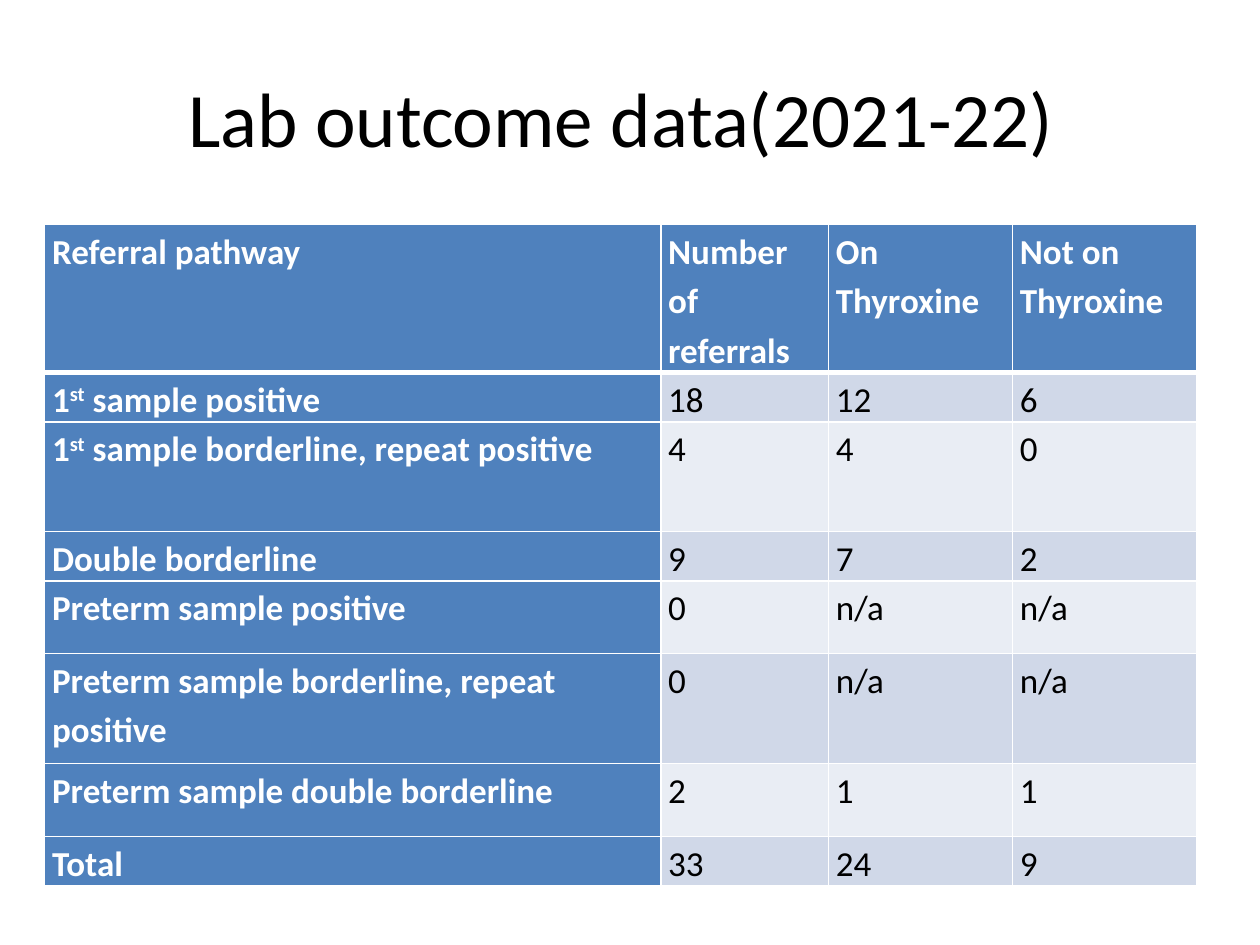
from lxml import etree
from pptx import Presentation
from pptx.dml.color import RGBColor
from pptx.enum import text
from pptx.oxml.ns import qn
from pptx.util import Cm, Pt

BLACK = RGBColor(0x00, 0x00, 0x00)
WHITE = RGBColor(0xFF, 0xFF, 0xFF)
BLUE = RGBColor(0x4F, 0x81, 0xBD)
BANDS = [RGBColor(0xE9, 0xED, 0xF4), RGBColor(0xD0, 0xD8, 0xE8)]

# Text between carets is superscript
OUTCOMES = [
    ("Referral pathway", "Number of referrals", "On Thyroxine", "Not on Thyroxine"),
    ("1^st^ sample positive", "18", "12", "6"),
    ("1^st^ sample borderline, repeat positive", "4", "4", "0"),
    ("Double borderline", "9", "7", "2"),
    ("Preterm sample positive", "0", "n/a", "n/a"),
    ("Preterm sample borderline, repeat positive", "0", "n/a", "n/a"),
    ("Preterm sample double borderline", "2", "1", "1"),
    ("Total", "33", "24", "9"),
]
COLUMN_WIDTHS = [12.42, 3.38, 3.71, 3.71]
ROW_HEIGHTS = [2.96, 0.99, 2.21, 0.99, 1.47, 2.21, 1.47, 0.99]


def add_borders(cell, widths):
    """Draw white cell borders; widths are points for left, right, top, bottom."""
    properties = cell._tc.get_or_add_tcPr()
    for position, (side, width) in enumerate(zip("LRTB", widths)):
        line = etree.Element(qn(f"a:ln{side}"), w=str(Pt(width)))
        fill = etree.SubElement(line, qn("a:solidFill"))
        etree.SubElement(fill, qn("a:srgbClr"), val=str(WHITE))
        properties.insert(position, line)


prs = Presentation()
prs.slide_width, prs.slide_height = Cm(25.4), Cm(19.05)
slide = prs.slides.add_slide(prs.slide_layouts[5])

title = slide.shapes.title
title.left, title.top, title.width, title.height = Cm(1.27), Cm(0.76), Cm(22.86), Cm(3.18)
title.text_frame.text = "Lab outcome data(2021-22) "
title.text_frame.vertical_anchor = text.MSO_ANCHOR.MIDDLE
heading = title.text_frame.paragraphs[0]
heading.alignment = text.PP_ALIGN.CENTER
heading.font.name, heading.font.size = "Calibri", Pt(44)
heading.font.color.rgb = BLACK

outcomes = slide.shapes.add_table(
    len(OUTCOMES), len(COLUMN_WIDTHS), Cm(0.9), Cm(4.53),
    Cm(sum(COLUMN_WIDTHS)), Cm(sum(ROW_HEIGHTS))).table
outcomes.first_col = True
for column, width in zip(outcomes.columns, COLUMN_WIDTHS):
    column.width = Cm(width)
for row, height in zip(outcomes.rows, ROW_HEIGHTS):
    row.height = Cm(height)

for r, values in enumerate(OUTCOMES):
    for c, value in enumerate(values):
        cell = outcomes.cell(r, c)
        is_heading = r == 0 or c == 0
        cell.margin_left = cell.margin_right = Cm(0.15)
        cell.margin_top = cell.margin_bottom = 0
        cell.fill.solid()
        cell.fill.fore_color.rgb = BLUE if is_heading else BANDS[r % 2]
        add_borders(cell, [1, 1, 3 if r == 1 else 1, 3 if r == 0 else 1])

        paragraph = cell.text_frame.paragraphs[0]
        paragraph.line_spacing = 1.15
        paragraph.font.name, paragraph.font.size = "Calibri", Pt(20)
        paragraph.font.bold = is_heading
        paragraph.font.color.rgb = WHITE if is_heading else BLACK
        for i, part in enumerate(value.split("^")):
            run = paragraph.add_run()
            run.text = part
            if i % 2:
                run._r.get_or_add_rPr().set("baseline", "30000")

prs.save("out.pptx")
